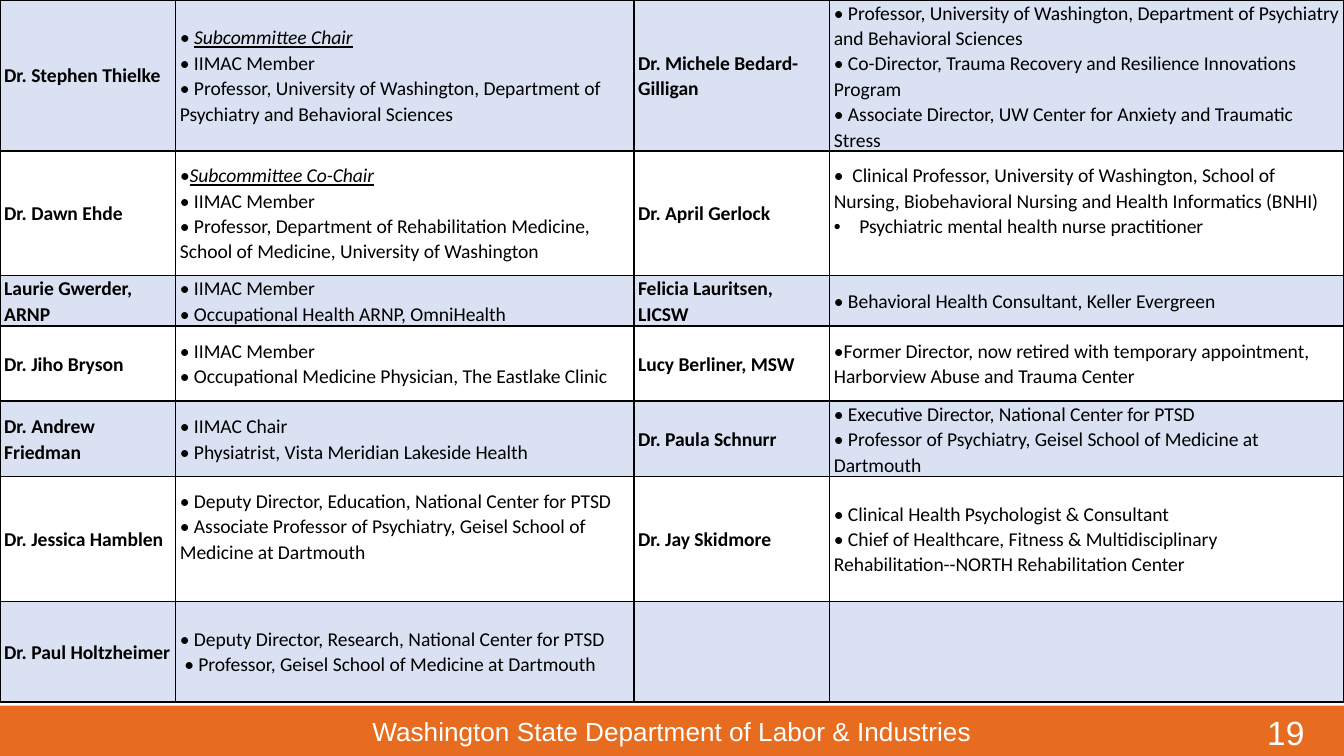
from lxml import etree
from pptx import Presentation
from pptx.dml.color import RGBColor
from pptx.enum.shapes import MSO_SHAPE
from pptx.enum.text import MSO_ANCHOR, PP_ALIGN
from pptx.oxml.ns import qn
from pptx.util import Cm, Pt

RECTANGLE = MSO_SHAPE.RECTANGLE
MIDDLE = MSO_ANCHOR.MIDDLE
CENTER, LEFT = PP_ALIGN.CENTER, PP_ALIGN.LEFT

COLORS = {"band": "D9E1F2", "plain": "FFFFFF", "ink": "000000",
          "footer": "E86C1F", "footer_text": "FFFFFF"}
SLIDE_WIDTH, SLIDE_HEIGHT = 25.4, 14.29
COLUMN_WIDTHS = [3.32, 8.66, 3.7, 9.72]
ROW_HEIGHTS = [2.85, 2.36, 0.94, 1.42, 1.42, 2.36, 1.9]
THIN, THICK = 1, 1.5
SIDE_MARGIN = 0.08
LINE_HEIGHT = 0.48
BULLET_INDENT = 0.48

# Name, roles, name, roles. "*" opens an underlined office, "-" a hanging bullet.
MEMBERS = [
    ("Dr. Stephen Thielke",
     ["• *Subcommittee Chair", "• IIMAC Member",
      "• Professor, University of Washington, Department of Psychiatry and Behavioral Sciences"],
     "Dr. Michele Bedard-Gilligan",
     ["• Professor, University of Washington, Department of Psychiatry and Behavioral Sciences",
      "• Co-Director, Trauma Recovery and Resilience Innovations Program",
      "• Associate Director, UW Center for Anxiety and Traumatic Stress"]),
    ("Dr. Dawn Ehde",
     ["•*Subcommittee Co-Chair", "• IIMAC Member",
      "• Professor, Department of Rehabilitation Medicine, School of Medicine, "
      "University of Washington"],
     "Dr. April Gerlock",
     ["•  Clinical Professor, University of Washington, School of Nursing, "
      "Biobehavioral Nursing and Health Informatics (BNHI)",
      "-Psychiatric mental health nurse practitioner"]),
    ("Laurie Gwerder, ARNP",
     ["• IIMAC Member", "• Occupational Health ARNP, OmniHealth"],
     "Felicia Lauritsen, LICSW",
     ["• Behavioral Health Consultant, Keller Evergreen"]),
    ("Dr. Jiho Bryson",
     ["• IIMAC Member", "• Occupational Medicine Physician, The Eastlake Clinic"],
     "Lucy Berliner, MSW",
     ["•Former Director, now retired with temporary appointment, "
      "Harborview Abuse and Trauma Center"]),
    ("Dr. Andrew Friedman",
     ["• IIMAC Chair", "• Physiatrist, Vista Meridian Lakeside Health"],
     "Dr. Paula Schnurr",
     ["• Executive Director, National Center for PTSD",
      "• Professor of Psychiatry, Geisel School of Medicine at Dartmouth"]),
    ("Dr. Jessica Hamblen",
     ["• Deputy Director, Education, National Center for PTSD",
      "• Associate Professor of Psychiatry, Geisel School of Medicine at Dartmouth"],
     "Dr. Jay Skidmore",
     ["• Clinical Health Psychologist & Consultant",
      "• Chief of Healthcare, Fitness & Multidisciplinary "
      "Rehabilitation--NORTH Rehabilitation Center"]),
    ("Dr. Paul Holtzheimer",
     ["• Deputy Director, Research, National Center for PTSD",
      " • Professor, Geisel School of Medicine at Dartmouth"],
     "", []),
]
# Cells (row, column) whose text sits half a line above the middle.
RAISED_CELLS = {(1, 3), (5, 1)}


def rgb(name):
    return RGBColor.from_string(COLORS[name])


def add_text(paragraph, text, font="Calibri", size=10.5, color="ink",
             bold=False, italic=False, underline=False):
    run = paragraph.add_run()
    run.text = text
    style = run.font
    style.name, style.size = font, Pt(size)
    style.bold, style.italic, style.underline = bold, italic, underline
    style.color.rgb = rgb(color)


def add_hanging_bullet(paragraph):
    properties = paragraph._p.get_or_add_pPr()
    properties.set("marL", str(Cm(BULLET_INDENT)))
    properties.set("indent", str(-Cm(BULLET_INDENT)))
    etree.SubElement(properties, qn("a:buFont"), typeface="Arial")
    etree.SubElement(properties, qn("a:buChar"), char="•")


def set_borders(cell, widths):
    """Draw the left, right, top and bottom borders, with widths in points."""
    properties = cell._tc.get_or_add_tcPr()
    for position, (side, width) in enumerate(zip("LRTB", widths)):
        line = etree.Element(qn(f"a:ln{side}"), w=str(Pt(width)))
        fill = etree.SubElement(line, qn("a:solidFill"))
        etree.SubElement(fill, qn("a:srgbClr"), val=COLORS["ink"])
        properties.insert(position, line)


def fill_cell(cell, lines, bold):
    for index, line in enumerate(lines):
        frame = cell.text_frame
        paragraph = frame.add_paragraph() if index else frame.paragraphs[0]
        paragraph.line_spacing = 1.07
        if line.startswith("-"):
            add_hanging_bullet(paragraph)
            line = line[1:]
        lead, _, office = line.partition("*")
        add_text(paragraph, lead, bold=bold, italic=bool(office))
        if office:
            add_text(paragraph, office, italic=True, underline=True)


def add_member_table(slide, left, top, width, height):
    table = slide.shapes.add_table(
        len(MEMBERS), len(COLUMN_WIDTHS),
        Cm(left), Cm(top), Cm(width), Cm(height)).table
    table.first_row = table.horz_banding = False
    for column, column_width in zip(table.columns, COLUMN_WIDTHS):
        column.width = Cm(column_width)
    for row, row_height in zip(table.rows, ROW_HEIGHTS):
        row.height = Cm(row_height)
    for r, member in enumerate(MEMBERS):
        for c, content in enumerate(member):
            cell = table.cell(r, c)
            cell.vertical_anchor = MIDDLE
            cell.margin_left = cell.margin_right = Cm(SIDE_MARGIN)
            cell.margin_top = 0
            cell.margin_bottom = Cm(LINE_HEIGHT if (r, c) in RAISED_CELLS else 0)
            cell.fill.solid()
            cell.fill.fore_color.rgb = rgb("plain" if r % 2 else "band")
            set_borders(cell, (THICK if c == 2 else THIN,
                               THICK if c == 1 else THIN, THIN, THIN))
            is_name = c % 2 == 0
            fill_cell(cell, [content] if is_name else content, is_name)


def add_footer(slide, left, top, width, height):
    bar = slide.shapes.add_shape(RECTANGLE, Cm(left), Cm(top), Cm(width), Cm(height))
    bar.shadow.inherit = False
    bar.fill.solid()
    bar.fill.fore_color.rgb = rgb("footer")
    bar.line.fill.background()
    labels = [
        ("19", left + width - 1.7, top, 1.48, 1.12, 18, LEFT),
        ("Washington State Department of Labor & Industries",
         left, top + 0.05, width, 0.64, 14, CENTER),
    ]
    for text, x, y, box_width, box_height, size, align in labels:
        box = slide.shapes.add_textbox(Cm(x), Cm(y), Cm(box_width), Cm(box_height))
        box.text_frame.word_wrap = True
        paragraph = box.text_frame.paragraphs[0]
        paragraph.alignment = align
        add_text(paragraph, text, font="Arial", size=size, color="footer_text")


def main():
    deck = Presentation()
    deck.slide_width, deck.slide_height = Cm(SLIDE_WIDTH), Cm(SLIDE_HEIGHT)
    slide = deck.slides.add_slide(deck.slide_layouts[6])
    footer_top = 13.34
    add_footer(slide, 0, footer_top, SLIDE_WIDTH, SLIDE_HEIGHT - footer_top)
    add_member_table(slide, 0, 0, SLIDE_WIDTH, sum(ROW_HEIGHTS))
    deck.save("out.pptx")


if __name__ == "__main__":
    main()
